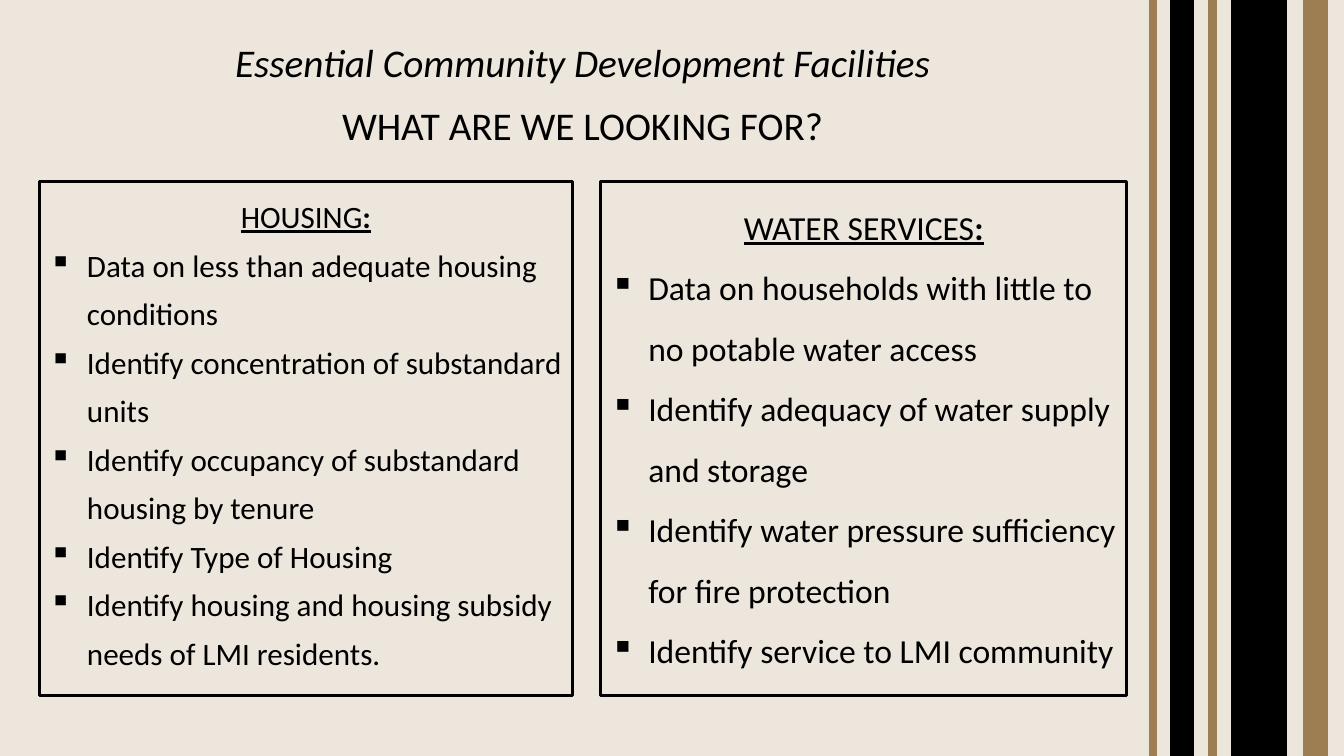
"""Build the slide on essential community development facilities."""
from lxml import etree
from pptx import Presentation
from pptx import util as u
from pptx.dml.color import RGBColor
from pptx.enum import shapes, text
from pptx.oxml.ns import qn

Pt = u.Pt
WIDTH, HEIGHT = 960, 540
FONT, INK, TAN, PAPER = "Calibri", "000000", "9C7E52", "ECE6DD"
MARGIN, INDENT = 28, 27
TITLES = [("Essential Community Development Facilities", True),
          ("WHAT ARE WE LOOKING FOR?", False)]
TITLE_TOP, TITLE_WIDTH, TITLE_HEIGHT = 20, 776, 45
PANEL_TOP, PANEL_HEIGHT = 129.6, 367.2
PANELS = [
    {"left": MARGIN, "width": 381, "size": 22.2, "spacing": 1.3,
     "heading": "HOUSING",
     "items": ["Data on less than adequate housing conditions",
               "Identify concentration of substandard units",
               "Identify occupancy of substandard housing by tenure",
               "Identify Type of Housing",
               "Identify housing and housing subsidy needs of LMI residents."]},
    {"left": 429, "width": 376, "size": 24, "spacing": 1.5,
     "heading": "WATER SERVICES",
     "items": ["Data on households with little to no potable water access",
               "Identify adequacy of water supply and storage",
               "Identify water pressure sufficiency for fire protection",
               "Identify service to LMI community"]},
]
STRIPES = [(879.8, 38.9, INK), (863.3, 5.8, TAN), (931, 17.3, TAN),
           (835.9, 16.6, INK), (821.5, 4.3, TAN)]


def color(hex_code):
    return RGBColor.from_string(hex_code)


def add_rect(left, top, width, height, fill, line, weight):
    box = page.shapes.add_shape(shapes.MSO_SHAPE.RECTANGLE, Pt(left), Pt(top),
                                Pt(width), Pt(height))
    box.shadow.inherit = False
    if fill:
        box.fill.solid()
        box.fill.fore_color.rgb = color(fill)
    else:
        box.fill.background()
    box.line.color.rgb = color(line)
    box.line.width = Pt(weight)
    return box


def add_span(para, words, size, italic=False, bold=False, underline=False):
    span = para.add_run()
    span.text = words
    font = span.font
    font.name, font.size = FONT, Pt(size)
    font.color.rgb = color(INK)
    font.italic, font.bold, font.underline = italic, bold, underline


def add_bullet(para):
    props = para._p.get_or_add_pPr()
    props.set("marL", str(Pt(INDENT)))
    props.set("indent", str(-Pt(INDENT)))
    etree.SubElement(props, qn("a:buChar")).set("char", "▪")


def add_title(row, words, italic):
    box = page.shapes.add_textbox(Pt(MARGIN), Pt(TITLE_TOP + row * TITLE_HEIGHT),
                                  Pt(TITLE_WIDTH), Pt(TITLE_HEIGHT))
    frame = box.text_frame
    frame.word_wrap = True
    frame.vertical_anchor = text.MSO_ANCHOR.BOTTOM
    para = frame.paragraphs[0]
    para.alignment = text.PP_ALIGN.CENTER
    para.line_spacing = 0.9
    add_span(para, words, 28, italic=italic)


def add_panel(panel):
    box = add_rect(panel["left"], PANEL_TOP, panel["width"], PANEL_HEIGHT,
                   None, INK, 2.25)
    frame = box.text_frame
    frame.word_wrap = True
    frame.vertical_anchor = text.MSO_ANCHOR.TOP
    size = panel["size"]
    heading = frame.paragraphs[0]
    heading.alignment = text.PP_ALIGN.CENTER
    heading.line_spacing = panel["spacing"]
    add_span(heading, panel["heading"], size, underline=True)
    add_span(heading, ":", size, bold=True, underline=True)
    for item in panel["items"]:
        para = frame.add_paragraph()
        para.alignment = text.PP_ALIGN.LEFT
        para.line_spacing = panel["spacing"]
        add_bullet(para)
        add_span(para, item, size)


deck = Presentation()
deck.slide_width, deck.slide_height = Pt(WIDTH), Pt(HEIGHT)
page = deck.slides.add_slide(deck.slide_layouts[6])
page.background.fill.solid()
page.background.fill.fore_color.rgb = color(PAPER)
for row, (words, italic) in enumerate(TITLES):
    add_title(row, words, italic)
for panel in PANELS:
    add_panel(panel)
for left, width, shade in STRIPES:
    add_rect(left, 0, width, HEIGHT, shade, shade, 1)
deck.save("out.pptx")
